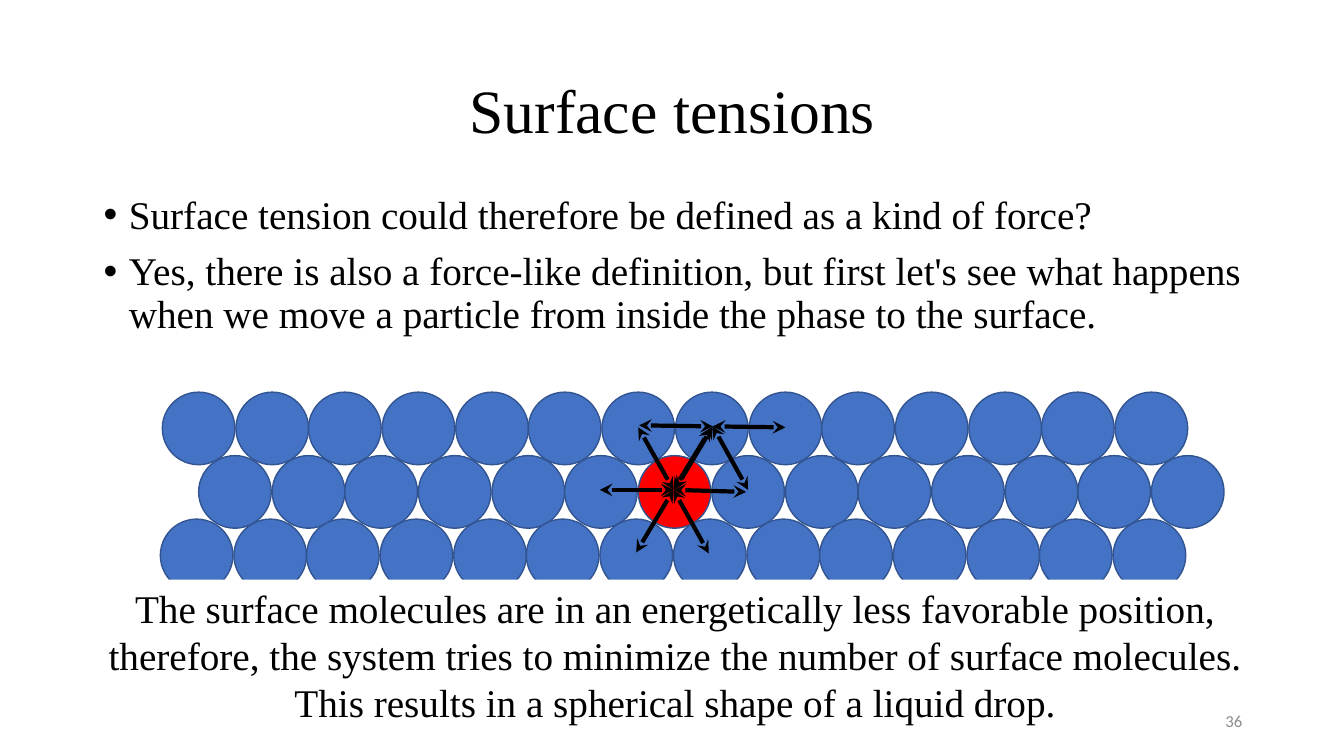
from dataclasses import dataclass
from pptx import Presentation
from pptx.dml.color import RGBColor
from pptx.enum.shapes import MSO_CONNECTOR as Conn, MSO_SHAPE as Shape
from pptx.enum.text import MSO_ANCHOR as Anchor, PP_ALIGN as Align
from pptx.oxml.ns import qn
from pptx.util import Pt
from lxml.etree import SubElement

PX = 9144


@dataclass(frozen=True)
class Theme:
    serif: str = "Times New Roman"
    sans: str = "Calibri"
    ink: str = "000000"
    paper: str = "FFFFFF"
    molecule: str = "4472C4"
    outline: str = "325491"
    marked: str = "FF0000"
    muted: str = "8C8C8C"
    title: int = 44
    text: int = 28
    small: int = 12


def apply(target, values):
    for name, value in values.items():
        setattr(target, name, value)


class SlideBuilder:
    def __init__(self, prs, theme):
        self.theme = theme
        self.s = prs.slides.add_slide(prs.slide_layouts[5])

    def box(self, at):
        return [v * PX for v in at]

    def set_text(self, sp, lines, size, align, anchor=Anchor.TOP, font=None, color=None,
                 bullets=False, **spacing):
        t = self.theme
        tf = sp.text_frame
        apply(tf, {"word_wrap": True, "vertical_anchor": anchor})
        for i, line in enumerate(lines):
            p = tf.add_paragraph() if i else tf.paragraphs[0]
            apply(p, {"alignment": align, **spacing})
            r = p.add_run()
            r.text = line
            apply(r.font, {"name": font or t.serif, "size": Pt(size)})
            r.font.color.rgb = RGBColor.from_string(color or t.ink)
            if bullets:
                pPr = p._p.get_or_add_pPr()
                pPr.set("marL", str(25 * PX))
                pPr.set("indent", str(-25 * PX))
                SubElement(pPr, qn("a:buFont")).set("typeface", "Arial")
                SubElement(pPr, qn("a:buChar")).set("char", "•")

    def title(self, text, at):
        sp = self.s.shapes.title
        apply(sp, dict(zip(("left", "top", "width", "height"), self.box(at))))
        self.set_text(sp, [text], self.theme.title, Align.CENTER, Anchor.MIDDLE,
                      line_spacing=0.9)

    def text(self, lines, at, size, align, **style):
        sp = self.s.shapes.add_textbox(*self.box(at))
        self.set_text(sp, lines, size, align, **style)

    def shape(self, kind, at, fill, line=None):
        sp = self.s.shapes.add_shape(kind, *self.box(at))
        sp.shadow.inherit = False
        sp.fill.solid()
        sp.fill.fore_color.rgb = RGBColor.from_string(fill)
        if line:
            sp.line.color.rgb = RGBColor.from_string(line)
            sp.line.width = Pt(1)
        else:
            sp.line.fill.background()
        return sp

    def panel(self, lines, at):
        sp = self.shape(Shape.RECTANGLE, at, self.theme.paper)
        self.set_text(sp, lines, self.theme.text, Align.CENTER)

    def arrow(self, start, end):
        cx = self.s.shapes.add_connector(Conn.STRAIGHT, *self.box(start + end))
        cx.line.color.rgb = RGBColor.from_string(self.theme.ink)
        cx.line.width = Pt(3)
        ln = cx._element.spPr.find(qn("a:ln"))
        for tag in ("a:headEnd", "a:tailEnd"):
            SubElement(ln, qn(tag)).set("type", "stealth")
        SubElement(cx._element.spPr, qn("a:effectLst"))


def main():
    prs = Presentation()
    apply(prs, {"slide_width": 1333 * PX, "slide_height": 750 * PX})
    t = Theme()
    b = SlideBuilder(prs, t)

    b.title("Surface tensions", (92, 40, 1150, 145))

    columns, span, diameter = 14, 945, 72
    marked_cell = (1, 6)
    for row, (left, top) in enumerate([(161, 389), (197, 452), (159, 515)]):
        for col in range(columns):
            x = left + round(col * span / (columns - 1))
            fill = t.marked if (row, col) == marked_cell else t.molecule
            b.shape(Shape.OVAL, (x, top, diameter, diameter), fill, t.outline)

    b.text(["Surface tension could therefore be defined as a kind of force?",
            "Yes, there is also a force-like definition, but first let's see what "
            "happens when we move a particle from inside the phase to the surface."],
           (93, 189, 1150, 150), t.text, Align.LEFT, bullets=True,
           line_spacing=0.9, space_before=Pt(10))

    bonds = {
        (668, 486): [(705, 425), (740, 488), (633, 424), (595, 486), (703, 549), (631, 548)],
        (707, 423): [(779, 424), (634, 422), (742, 486), (670, 485)],
    }
    for center, neighbours in bonds.items():
        for neighbour in neighbours:
            b.arrow(center, neighbour)

    b.panel(["The surface molecules are in an energetically less favorable position, "
             "therefore, the system tries to minimize the number of surface molecules.",
             "This results in a spherical shape of a liquid drop."],
            (55, 575, 1229, 151))
    b.text(["36"], (942, 695, 300, 40), t.small, Align.RIGHT,
           anchor=Anchor.MIDDLE, font=t.sans, color=t.muted)

    prs.save("out.pptx")


if __name__ == "__main__":
    main()
